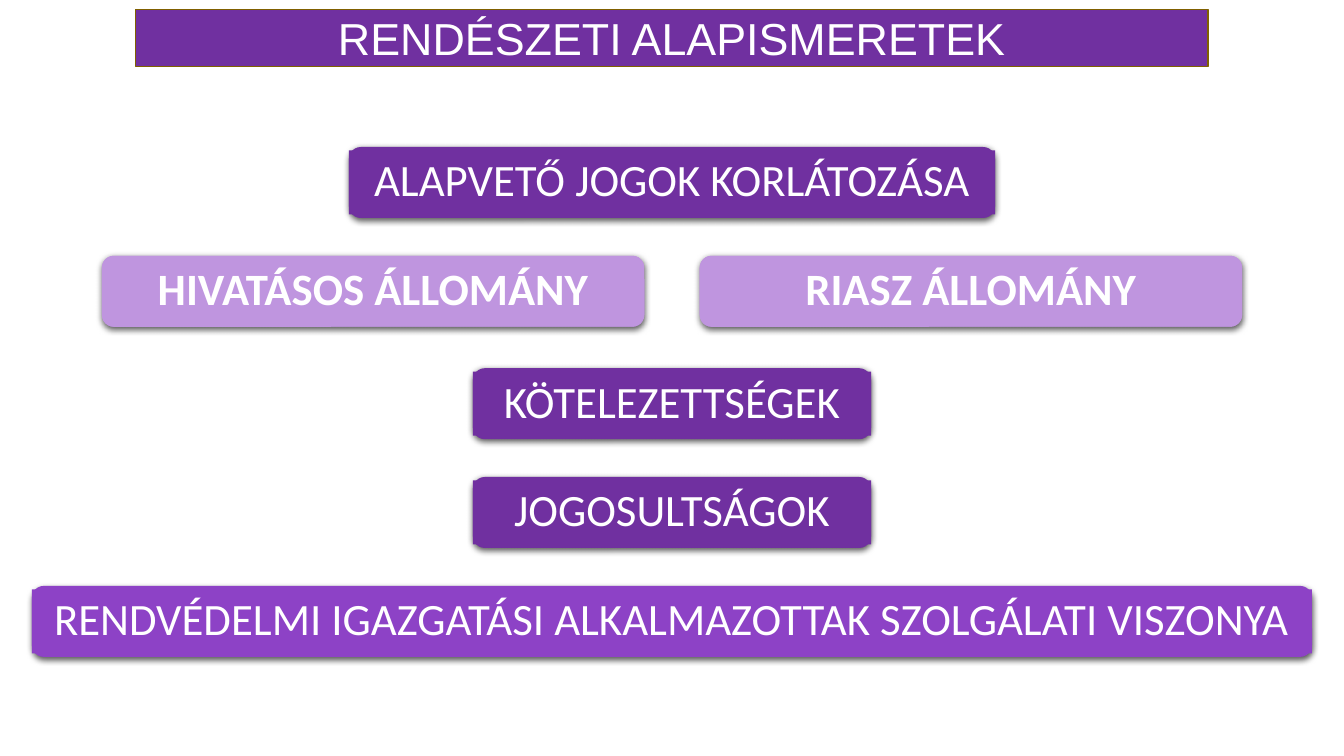
from lxml.etree import SubElement
from pptx import Presentation
from pptx.dml.color import RGBColor
from pptx.enum.shapes import MSO_SHAPE
from pptx.enum.text import MSO_ANCHOR, MSO_AUTO_SIZE, PP_ALIGN
from pptx.oxml.ns import qn
from pptx.util import Pt

PURPLE = RGBColor(0x70, 0x30, 0xA0)
LILAC = RGBColor(0xBF, 0x95, 0xDF)
VIOLET = RGBColor(0x8D, 0x42, 0xC6)
OLIVE = RGBColor(0x80, 0x60, 0x00)
WHITE = RGBColor(0xFF, 0xFF, 0xFF)
BLACK = RGBColor(0x00, 0x00, 0x00)

PAGE_WIDTH, PAGE_HEIGHT = 960, 540
CARD_HEIGHT, FACE_INSET = 50.7, 2.5
PAIR_GAP = 39.6


def write_label(shape, text, font_name, bold=False, line_spacing=1.0):
    """Set one centred white line of text in a shape."""
    frame = shape.text_frame
    frame.auto_size = MSO_AUTO_SIZE.NONE
    frame.word_wrap = True
    frame.vertical_anchor = MSO_ANCHOR.MIDDLE
    frame.margin_left = frame.margin_right = 0
    frame.margin_top = frame.margin_bottom = 0
    para = frame.paragraphs[0]
    para.alignment = PP_ALIGN.CENTER
    para.line_spacing = line_spacing
    para.space_before = Pt(0)
    span = para.add_run()
    span.text = text
    span.font.name = font_name
    span.font.size = Pt(32)
    span.font.bold = bold
    span.font.color.rgb = WHITE


def add_drop_shadow(shape):
    """Give a shape a soft shadow falling straight down."""
    shape.shadow.inherit = False
    effects = shape.element.spPr.find(qn("a:effectLst"))
    shadow = SubElement(effects, qn("a:outerShdw"), blurRad=str(Pt(4.5)),
                        dist=str(Pt(1.5)), dir="5400000", algn="ctr", rotWithShape="0")
    color = SubElement(shadow, qn("a:srgbClr"), val=str(BLACK))
    SubElement(color, qn("a:alpha"), val="63000")


def add_panel(shapes, kind, box, color):
    """Add a borderless filled shape without a shadow."""
    panel = shapes.add_shape(kind, *(Pt(length) for length in box))
    panel.shadow.inherit = False
    panel.fill.solid()
    panel.fill.fore_color.rgb = color
    panel.line.fill.background()
    return panel


def add_card(page, box, text, color, rounded_face=False):
    """Add a shadowed rounded base with a labelled face on top."""
    left, top, width, height = box
    card = page.shapes.add_group_shape()
    add_drop_shadow(add_panel(card.shapes, MSO_SHAPE.ROUNDED_RECTANGLE, box, color))
    if rounded_face:
        face = add_panel(card.shapes, MSO_SHAPE.ROUNDED_RECTANGLE, box, color)
    else:
        face_box = (left, top + FACE_INSET, width, height - 2 * FACE_INSET)
        face = add_panel(card.shapes, MSO_SHAPE.RECTANGLE, face_box, color)
    write_label(face, text, "Calibri", bold=rounded_face, line_spacing=0.9)


def add_card_row(page, top, width, labels, color):
    """Centre a row of equal cards on the page."""
    count = len(labels)
    left = (PAGE_WIDTH - count * width - (count - 1) * PAIR_GAP) / 2
    for index, text in enumerate(labels):
        box = (left + index * (width + PAIR_GAP), top, width, CARD_HEIGHT)
        add_card(page, box, text, color, rounded_face=count > 1)


def place_title(page, box, text):
    """Turn the title placeholder into the banner."""
    title = page.shapes.title
    title.left, title.top, title.width, title.height = (Pt(length) for length in box)
    title.fill.solid()
    title.fill.fore_color.rgb = PURPLE
    title.line.color.rgb = OLIVE
    title.line.width = Pt(1)
    write_label(title, text, "Arial")


def build_overview(deck):
    """Build the slide of topic cards."""
    page = deck.slides.add_slide(deck.slide_layouts[5])
    place_title(page, (97, 6.7, 766, 41), "RENDÉSZETI ALAPISMERETEK")
    rows = [
        (105, 461.5, ["ALAPVETŐ JOGOK KORLÁTOZÁSA"], PURPLE),
        (182.7, 387.4, ["HIVATÁSOS ÁLLOMÁNY", "RIASZ ÁLLOMÁNY"], LILAC),
        (263, 284.4, ["KÖTELEZETTSÉGEK"], PURPLE),
        (340.7, 284.4, ["JOGOSULTSÁGOK"], PURPLE),
        (418.5, 914.4,
         ["RENDVÉDELMI IGAZGATÁSI ALKALMAZOTTAK SZOLGÁLATI VISZONYA"], VIOLET),
    ]
    for top, width, labels, color in rows:
        add_card_row(page, top, width, labels, color)


def main():
    """Create and save the deck."""
    deck = Presentation()
    deck.slide_width, deck.slide_height = Pt(PAGE_WIDTH), Pt(PAGE_HEIGHT)
    build_overview(deck)
    deck.save("out.pptx")


if __name__ == "__main__":
    main()
